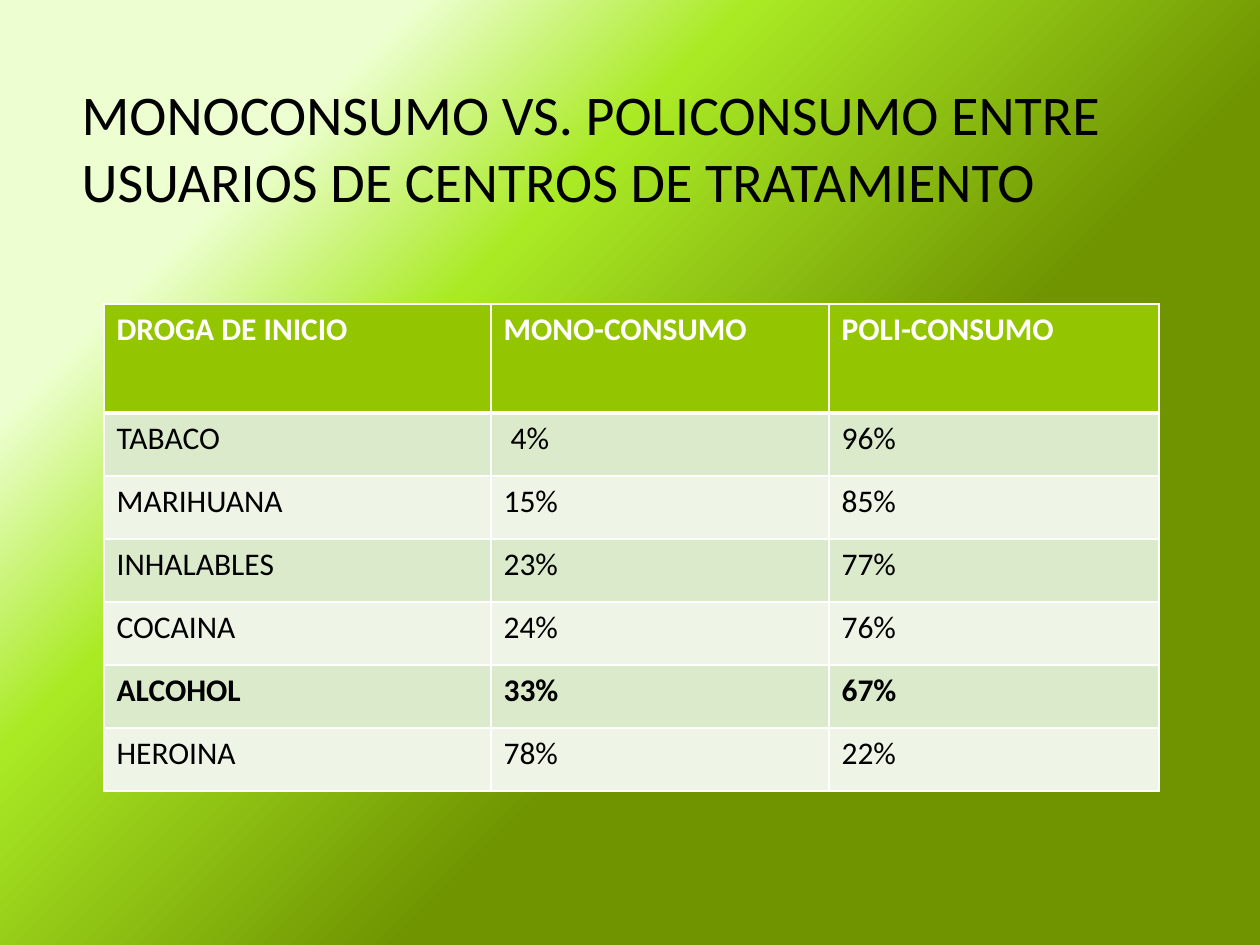
from copy import deepcopy

from lxml import etree
from pptx import Presentation
from pptx.dml.color import RGBColor
from pptx.enum.text import MSO_ANCHOR, MSO_AUTO_SIZE, PP_ALIGN
from pptx.oxml.ns import qn
from pptx.util import Emu, Pt

LEFT = PP_ALIGN.LEFT
TOP = MSO_ANCHOR.TOP
NO_AUTOFIT = MSO_AUTO_SIZE.NONE

EMU_PER_PX = 914400 / 126
FONT = "Calibri"
TITLE_ONLY = 5
COLORS = {
    "pale": "EDFFD1",
    "lime": "AAEA25",
    "olive": "6F9400",
    "header": "94C600",
    "odd_row": "DCEACC",
    "even_row": "EEF5E7",
    "white": "FFFFFF",
    "black": "000000",
}

TITLE = "MONOCONSUMO VS. POLICONSUMO ENTRE USUARIOS DE CENTROS DE TRATAMIENTO"
ROWS = [
    ("DROGA DE INICIO", "MONO-CONSUMO", "POLI-CONSUMO"),
    ("TABACO", " 4%", "96%"),
    ("MARIHUANA", "15%", "85%"),
    ("INHALABLES", "23%", "77%"),
    ("COCAINA", "24%", "76%"),
    ("ALCOHOL", "33%", "67%"),
    ("HEROINA", "78%", "22%"),
]
COLUMN_WIDTHS = [387, 338, 330]
ROW_HEIGHTS = [109] + [63] * 6
HIGHLIGHTED = "ALCOHOL"


def px(length):
    return Emu(round(length * EMU_PER_PX))


def rgb(name):
    return RGBColor.from_string(COLORS[name])


def write_text(frame, text, size=18, color="black", bold=False, space_before=0):
    frame.text = text
    paragraph = frame.paragraphs[0]
    paragraph.alignment = LEFT
    paragraph.space_before = Pt(space_before)
    font = paragraph.runs[0].font
    font.name = FONT
    font.size = Pt(size)
    font.bold = bold
    font.color.rgb = rgb(color)


def add_borders(cell, widths):
    """Draw white cell borders; widths in points, in the order L, R, T, B."""
    properties = cell._tc.get_or_add_tcPr()
    for side, width in zip("LRTB", widths):
        line = etree.SubElement(properties, qn(f"a:ln{side}"), w=str(Pt(width)))
        fill = etree.SubElement(line, qn("a:solidFill"))
        etree.SubElement(fill, qn("a:srgbClr"), val=COLORS["white"])


class SlideBuilder:
    """Holds the slide being built and its style."""

    def __init__(self, presentation):
        layout = presentation.slide_layouts[TITLE_ONLY]
        self.slide = presentation.slides.add_slide(layout)

    def gradient_background(self, stops, clockwise_angle):
        fill = self.slide.background.fill
        fill.gradient()
        fill.gradient_angle = 360 - clockwise_angle
        stop_list = self.slide.element.find(".//" + qn("a:gsLst"))
        while len(stop_list) < len(stops):
            stop_list.append(deepcopy(stop_list[-1]))
        for stop, (position, color) in zip(fill.gradient_stops, stops):
            stop.position = position
            stop.color.rgb = rgb(color)

    def title(self, text, left, top, width, height):
        shape = self.slide.shapes.title
        shape.left, shape.top = px(left), px(top)
        shape.width, shape.height = px(width), px(height)
        frame = shape.text_frame
        frame.word_wrap = True
        frame.auto_size = NO_AUTOFIT
        frame.vertical_anchor = TOP
        write_text(frame, text, size=32, space_before=6.4)

    def table(self, rows, left, top, column_widths, row_heights):
        table = self.slide.shapes.add_table(
            len(rows), len(column_widths), px(left), px(top),
            px(sum(column_widths)), px(sum(row_heights)),
        ).table
        for column, width in zip(table.columns, column_widths):
            column.width = px(width)
        for row, height in zip(table.rows, row_heights):
            row.height = px(height)
        for row_index, values in enumerate(rows):
            is_header = row_index == 0
            band = "odd_row" if row_index % 2 else "even_row"
            for column_index, value in enumerate(values):
                cell = table.cell(row_index, column_index)
                write_text(
                    cell.text_frame, value,
                    color="white" if is_header else "black",
                    bold=is_header or values[0] == HIGHLIGHTED,
                )
                top_width = 3 if row_index == 1 else 1
                add_borders(cell, (1, 1, top_width, 3 if is_header else 1))
                cell.fill.solid()
                cell.fill.fore_color.rgb = rgb("header" if is_header else band)


def main():
    presentation = Presentation()
    presentation.slide_width, presentation.slide_height = px(1260), px(945)
    builder = SlideBuilder(presentation)
    builder.gradient_background(
        [(0.19, "pale"), (0.34, "lime"), (0.61, "olive")], clockwise_angle=45
    )
    builder.title(TITLE, 69, 73, 1128, 577)
    builder.table(ROWS, 104, 304, COLUMN_WIDTHS, ROW_HEIGHTS)
    presentation.save("out.pptx")


if __name__ == "__main__":
    main()
